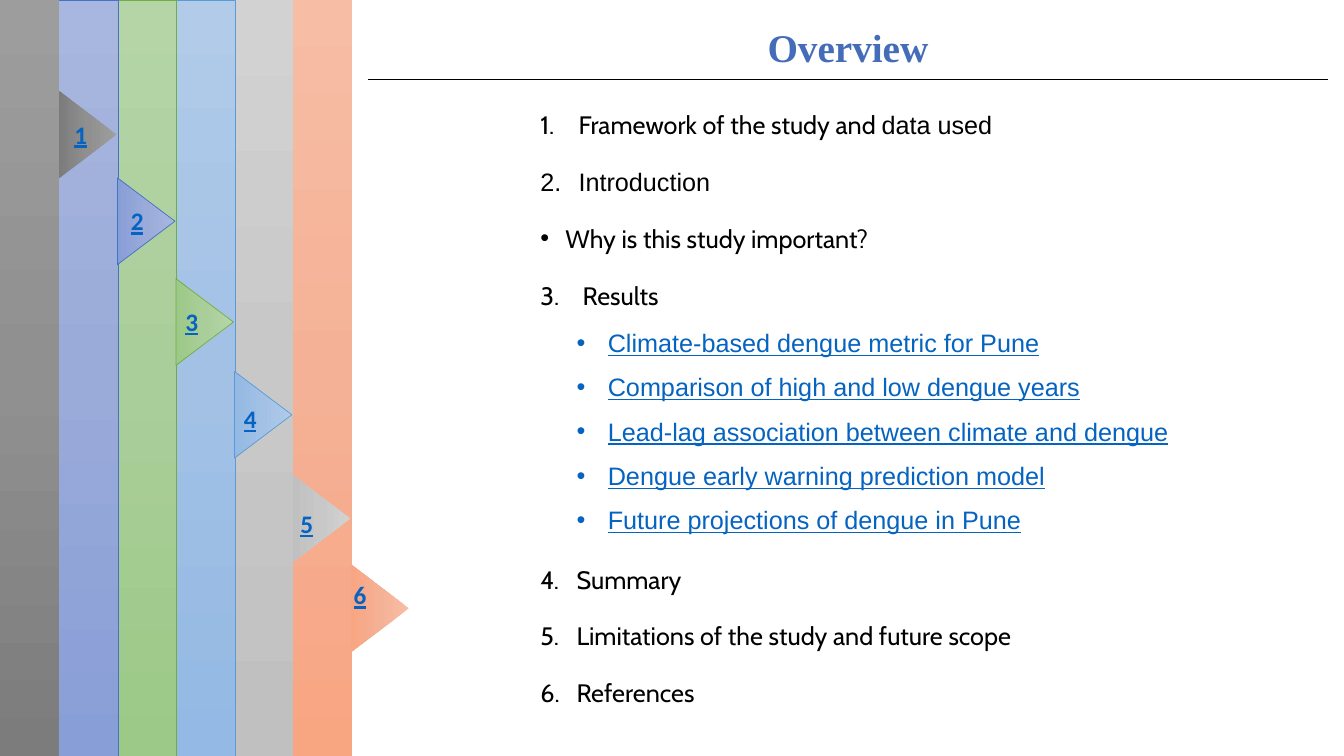
import copy

import pptx
import pptx.dml.color
import pptx.enum.shapes
import pptx.enum.text
import pptx.oxml
import pptx.oxml.ns
import pptx.util

Inches = pptx.util.Inches
Pt = pptx.util.Pt
qn = pptx.oxml.ns.qn
SHAPE = pptx.enum.shapes.MSO_SHAPE

LINK = "0563C1"
BAND_STEP = 0.58
TABS = [
    (("9D9D9D", "909090", "7C7C7C"), None, 1.05, (0.64, 1.13)),
    (("A8B7DF", "9AABD9", "889ED7"), "4472C4", 1.91, (1.2, 1.99)),
    (("B5D5A7", "AACE9A", "9CC987"), "70AD47", 2.91, (1.74, 2.99)),
    (("B1CBE9", "A3C1E5", "93B9E4"), "5B9BD5", 3.83, (2.32, 3.95)),
    (("D2D2D2", "C8C8C8", "C0C0C0"), None, 4.86, (2.88, 4.99)),
    (("F7BDA5", "F5B196", "F8A582"), None, 5.75, (3.41, 5.7)),
]
OPENING = [
    ([("Framework of the study and ", "Cabin"), ("data used", "Arial")], 1, 0.38),
    ([("Introduction", "Arial")], 1, 0.38),
    ([("Why is this study important?", "Cabin")], None, 0.25),
    ([("Results", "Cabin")], 3, 0.42),
]
RESULTS = [
    "Climate-based dengue metric for Pune",
    "Comparison of high and low dengue years",
    "Lead-lag association between climate and dengue",
    "Dengue early warning prediction model",
    "Future projections of dengue in Pune",
]
CLOSING = ["Summary", "Limitations of the study and future scope", "References"]


def rgb(value):
    """Turn a hex string into a colour."""
    return pptx.dml.color.RGBColor.from_string(value)


def add_gradient_shape(slide, kind, box, colors, line):
    """Add a shape with an even gradient running from its top to its bottom."""
    s = slide.shapes.add_shape(kind, *map(Inches, box))
    s.shadow.inherit = False
    s.fill.gradient()
    s.fill.gradient_angle = 270
    stops = s._element.spPr.find(".//" + qn("a:gsLst"))
    stops.append(copy.deepcopy(stops[0]))
    for stop, position, color in zip(s.fill.gradient_stops, (0, 0.5, 1), colors):
        stop.position = position
        stop.color.rgb = rgb(color)
    if line:
        s.line.color.rgb = rgb(line)
        s.line.width = Pt(0.5)
    else:
        s.line.fill.background()
    return s


def add_text_frame(slide, box):
    """Add a wrapping text box and return its frame."""
    tf = slide.shapes.add_textbox(*map(Inches, box)).text_frame
    tf.word_wrap = True
    return tf


def style(p, font, size, color, bold=None, underline=None):
    """Set the font of a whole paragraph."""
    p.font.name = font
    p.font.size = Pt(size)
    p.font.color.rgb = rgb(color)
    p.font.bold = bold
    p.font.underline = underline


def add_tab(slide, number, colors, line, top, label_at):
    """Add a vertical band with its pointer and number."""
    x = (number - 1) * BAND_STEP
    add_gradient_shape(slide, SHAPE.RECTANGLE, (x, 0, 0.59, 7.5), colors, line)
    pointer = (x + 0.44, top, 0.86, 0.57)
    s = add_gradient_shape(slide, SHAPE.ISOSCELES_TRIANGLE, pointer, colors, line)
    s.rotation = 90
    tf = add_text_frame(slide, (*label_at, 0.23, 0.4))
    tf.margin_right = 0
    p = tf.paragraphs[0]
    p.text = str(number)
    style(p, "Calibri", 18, LINK, True, True)


def set_marker(p, start, indent):
    """Give a paragraph a hanging number, or a bullet if start is None."""
    pPr = p._p.get_or_add_pPr()
    pPr.set("marL", str(Inches(indent)))
    pPr.set("indent", str(-Inches(indent)))
    if start is None:
        bullet = pptx.oxml.ns.nsdecls("a")
        pPr.insert_element_before(
            pptx.oxml.parse_xml(f'<a:buFont {bullet} typeface="Arial"/>'), "a:defRPr")
        mark = pptx.oxml.parse_xml(f'<a:buChar {bullet} char="•"/>')
    else:
        mark = pptx.oxml.parse_xml(
            f'<a:buAutoNum {pptx.oxml.ns.nsdecls("a")} type="arabicPeriod" startAt="{start}"/>')
    pPr.insert_element_before(mark, "a:defRPr")


def add_list(slide, box, items, spacing, color="000000", underline=None):
    """Add a list of (runs, start number, indent) items."""
    tf = add_text_frame(slide, box)
    for i, (runs, start, indent) in enumerate(items):
        p = tf.add_paragraph() if i else tf.paragraphs[0]
        p.line_spacing = Pt(spacing)
        p.space_before = Pt(10)
        style(p, runs[0][1], 18, color, underline=underline)
        for text, font in runs:
            r = p.add_run()
            r.text = text
            if font != runs[0][1]:
                r.font.name = font
        set_marker(p, start, indent)


def add_title(slide, text):
    """Add the one-cell title table with a rule below it."""
    box = map(Inches, (3.64, 0.22, 9.54, 0.57))
    table = slide.shapes.add_table(1, 1, *box).table
    table.first_row = table.horz_banding = False
    cell = table.cell(0, 0)
    cell.fill.background()
    p = cell.text_frame.paragraphs[0]
    p.text = text
    p.alignment = pptx.enum.text.PP_ALIGN.CENTER
    style(p, "Times New Roman", 28, "446CB8", True)
    tcPr = cell._tc.get_or_add_tcPr()
    borders = (("lnL", "FFFFFF"), ("lnR", "FFFFFF"), ("lnB", "000000"))
    for i, (side, color) in enumerate(borders):
        tcPr.insert(i, pptx.oxml.parse_xml(
            f'<a:{side} {pptx.oxml.ns.nsdecls("a")} w="{Pt(1)}"><a:solidFill>'
            f'<a:srgbClr val="{color}"/></a:solidFill></a:{side}>'))


def main():
    """Build the overview slide."""
    prs = pptx.Presentation()
    prs.slide_width = Inches(13.33)
    prs.slide_height = Inches(7.5)
    slide = prs.slides.add_slide(prs.slide_layouts[6])
    for number, tab in reversed(list(enumerate(TABS, 1))):
        add_tab(slide, number, *tab)
    add_list(slide, (5.26, 0.91, 6.98, 2.29), OPENING, 30.6)
    results = [([(text, "Arial")], None, 0.31) for text in RESULTS]
    add_list(slide, (5.62, 3.2, 6.62, 2.18), results, 21.6, LINK, True)
    closing = [([(text, "Cabin")], 4, 0.36) for text in CLOSING]
    add_list(slide, (5.26, 5.42, 6.98, 1.86), closing, 30.6)
    add_title(slide, "Overview")
    prs.save("out.pptx")


if __name__ == "__main__":
    main()
